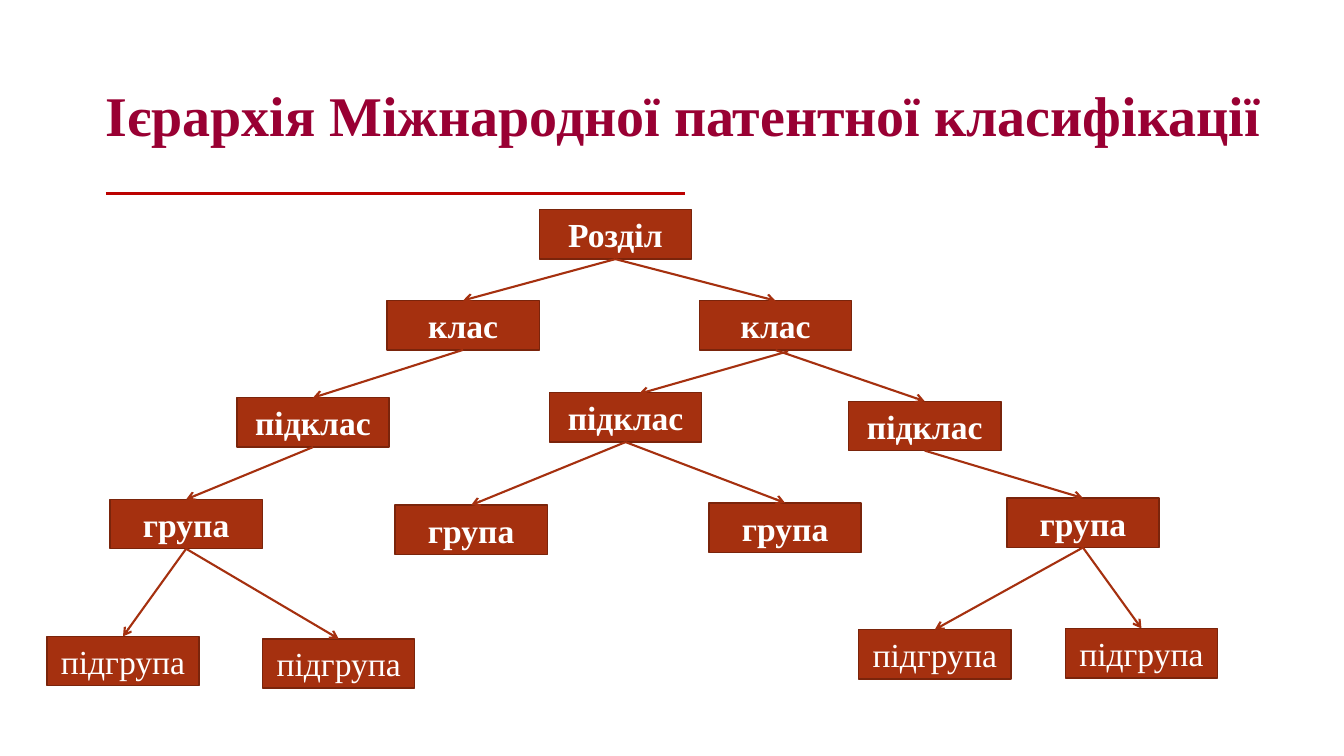
"""Build a slide with the hierarchy of the International Patent Classification."""
import lxml.etree
import pptx
import pptx.dml.color
import pptx.enum.shapes
import pptx.enum.text
import pptx.oxml.ns
import pptx.util

Pt = pptx.util.Pt
RGBColor = pptx.dml.color.RGBColor
qn = pptx.oxml.ns.qn
STRAIGHT = pptx.enum.shapes.MSO_CONNECTOR.STRAIGHT

TITLE_RED = RGBColor(0x99, 0x00, 0x33)
RULE_RED = RGBColor(0xBB, 0x01, 0x00)
RUST = RGBColor(0xA5, 0x30, 0x0F)
DARK_RUST = RGBColor(0x7A, 0x24, 0x0B)
WHITE = RGBColor(0xFF, 0xFF, 0xFF)

LEVEL_WIDTH, LEVEL_HEIGHT = 108.7, 35.3
BOTTOM, TOP = 2, 0


def write(holder, text, size=24, color=WHITE, bold=True, line_spacing=1.0):
    frame = holder.text_frame
    frame.word_wrap = True
    frame.vertical_anchor = pptx.enum.text.MSO_ANCHOR.MIDDLE
    paragraph = frame.paragraphs[0]
    paragraph.alignment = pptx.enum.text.PP_ALIGN.CENTER
    paragraph.line_spacing = line_spacing
    run = paragraph.add_run()
    run.text = text
    run.font.name = "Times New Roman"
    run.font.size = Pt(size)
    run.font.bold = bold
    run.font.color.rgb = color


def draw_line(x1, y1, x2, y2, color, width, arrow=False):
    line = slide.shapes.add_connector(STRAIGHT, Pt(x1), Pt(y1), Pt(x2), Pt(y2))
    line.line.color.rgb = color
    line.line.width = Pt(width)
    properties = line._element.find(qn("p:spPr"))
    if arrow:
        lxml.etree.SubElement(properties.find(qn("a:ln")), qn("a:tailEnd"), type="arrow")
    lxml.etree.SubElement(properties, qn("a:effectLst"))
    return line


deck = pptx.Presentation()
deck.slide_width, deck.slide_height = Pt(960), Pt(540)
slide = deck.slides.add_slide(deck.slide_layouts[6])

draw_line(75.6, 138.4, 489.6, 138.4, RULE_RED, 2.5)
title = slide.shapes.add_textbox(Pt(51.1), Pt(47.5), Pt(873.4), Pt(74.2))
write(title, "Ієрархія Міжнародної патентної класифікації",
      size=40, color=TITLE_RED, line_spacing=0.9)

levels = [
    ("section", "Розділ", 385.2, 149.8),
    ("class 1", "клас", 276.5, 214.6),
    ("class 2", "клас", 499.7, 214.8),
    ("subclass 1", "підклас", 169.2, 284.1),
    ("subclass 2", "підклас", 392.5, 280.5),
    ("subclass 3", "підклас", 606.2, 286.6),
    ("group 1", "група", 78.6, 356.7),
    ("group 2", "група", 282.2, 360.8),
    ("group 3", "група", 506.4, 359.2),
    ("group 4", "група", 719.2, 355.8),
    ("subgroup 1", "підгрупа", 33.5, 454.6),
    ("subgroup 2", "підгрупа", 187.6, 456.3),
    ("subgroup 3", "підгрупа", 613.4, 449.7),
    ("subgroup 4", "підгрупа", 761.0, 448.9),
]
boxes = {}
for key, label, left, top in levels:
    box = slide.shapes.add_shape(pptx.enum.shapes.MSO_SHAPE.RECTANGLE, Pt(left), Pt(top),
                                 Pt(LEVEL_WIDTH), Pt(LEVEL_HEIGHT))
    box.shadow.inherit = False
    box.fill.solid()
    box.fill.fore_color.rgb = RUST
    box.line.color.rgb = DARK_RUST
    box.line.width = Pt(1)
    write(box, label, bold=label != "підгрупа")
    boxes[key] = box

branches = [
    ("section", "class 1"), ("section", "class 2"),
    ("class 1", "subclass 1"), ("class 2", "subclass 3"),
    ("subclass 1", "group 1"), ("subclass 2", "group 2"),
    ("subclass 2", "group 3"), ("subclass 3", "group 4"),
    ("group 1", "subgroup 1"), ("group 1", "subgroup 2"),
    ("group 4", "subgroup 3"), ("group 4", "subgroup 4"),
]
for parent, child in branches:
    branch = draw_line(0, 0, 0, 0, RUST, 1.5, arrow=True)
    branch.begin_connect(boxes[parent], BOTTOM)
    branch.end_connect(boxes[child], TOP)

draw_line(563, 250.9, 456.5, 281.3, RUST, 1.5, arrow=True)

deck.save("out.pptx")
